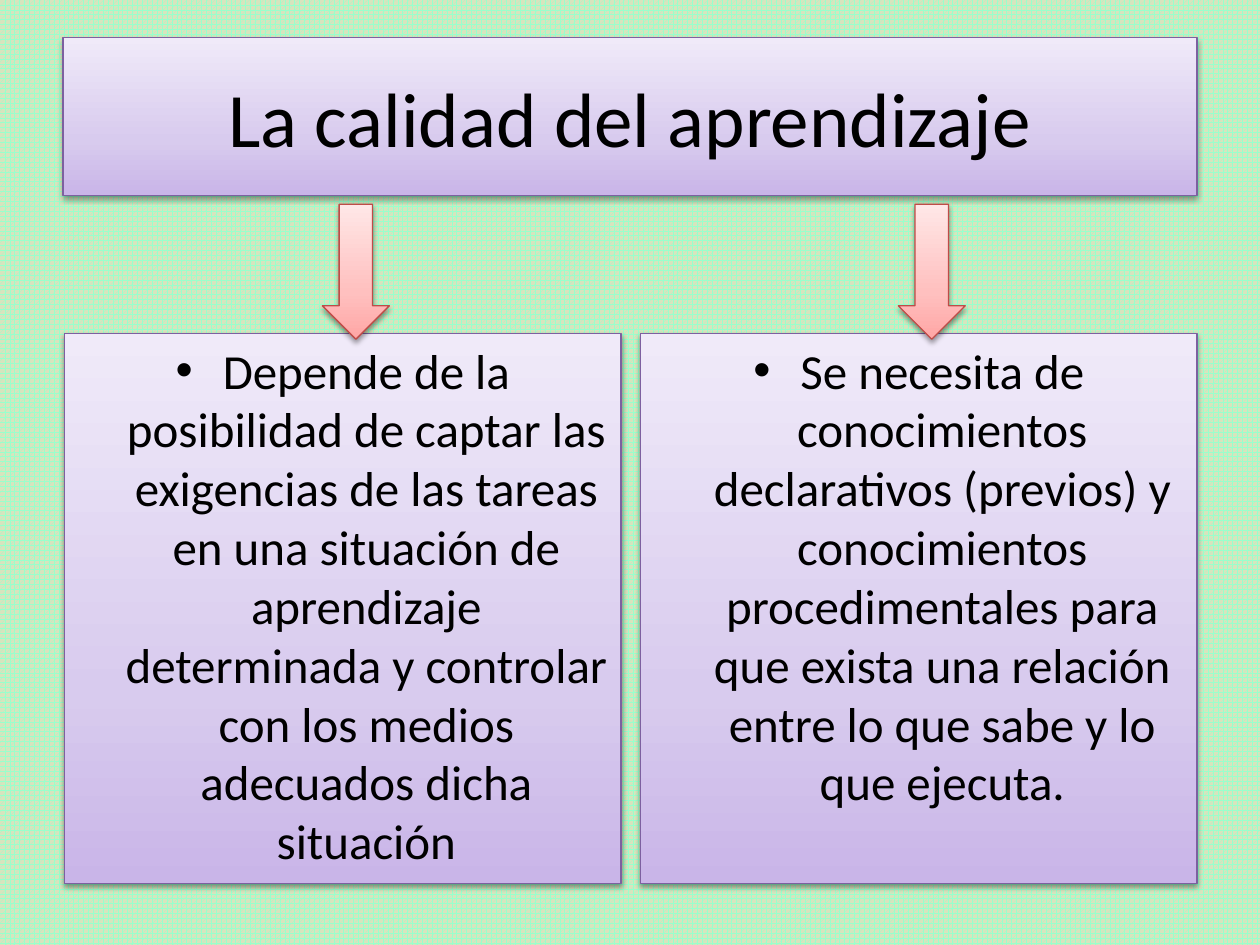
from dataclasses import dataclass

from lxml import etree
from pptx import Presentation
from pptx import util as u
from pptx.dml.color import RGBColor
from pptx.enum import dml, shapes, text
from pptx.oxml.ns import qn


@dataclass(frozen=True)
class Finish:
    stops: tuple[tuple[int, str], ...]
    line: str


@dataclass(frozen=True)
class Theme:
    font: str = "Calibri"
    ink: str = "000000"
    title_size: int = 44
    body_size: int = 28
    pattern_front: str = "99FFCC"
    pattern_back: str = "D7E4BD"
    purple: Finish = Finish(((0, "C9B5E8"), (35, "D8CBEE"), (100, "F0EAF9")), "7D60A0")
    red: Finish = Finish(((0, "FFA6A5"), (35, "FFC0BF"), (100, "FFE7E7")), "BF4C48")


@dataclass(frozen=True)
class Frame:
    """Position and size in centimetres."""
    left: float
    top: float
    width: float
    height: float

    def shifted(self, distance: float) -> "Frame":
        return Frame(self.left + distance, self.top, self.width, self.height)


THEME = Theme()
TITLE = Frame(1.27, 0.76, 22.86, 3.18)
FIRST_PANEL = Frame(1.3, 6.73, 11.22, 11.08)
FIRST_ARROW = Frame(6.5, 4.12, 1.35, 2.72)
COLUMN_PITCH = 11.61
INDENT = u.Cm(0.95)
STATEMENTS = (
    "Depende de la posibilidad de captar las exigencias de las tareas en una "
    "situación de aprendizaje determinada y controlar con los medios "
    "adecuados dicha situación",
    "Se necesita de conocimientos declarativos (previos) y conocimientos "
    "procedimentales para que exista una relación entre lo que sabe y lo que ejecuta.",
)


def add_color(parent, value: str):
    return etree.SubElement(parent, qn("a:srgbClr"), val=value)


def add_shadow(box) -> None:
    box.shadow.inherit = False
    effects = box._element.spPr.find(qn("a:effectLst"))
    shadow = etree.SubElement(
        effects, qn("a:outerShdw"), blurRad=str(u.Pt(3.1)),
        dist=str(u.Pt(1.6)), dir="5400000", rotWithShape="0")
    etree.SubElement(add_color(shadow, "000000"), qn("a:alpha"), val="38000")


def add_box(page, kind, frame: Frame, finish: Finish):
    """Add a shape with an upward gradient, a thin line and a soft shadow."""
    box = page.shapes.add_shape(
        kind, u.Cm(frame.left), u.Cm(frame.top), u.Cm(frame.width), u.Cm(frame.height))
    box.fill.gradient()
    box.fill.gradient_angle = 90
    stop_list = box._element.spPr.find(qn("a:gradFill")).find(qn("a:gsLst"))
    for old_stop in list(stop_list):
        stop_list.remove(old_stop)
    for position, color in finish.stops:
        add_color(etree.SubElement(stop_list, qn("a:gs"), pos=str(position * 1000)), color)
    box.line.color.rgb = RGBColor.from_string(finish.line)
    box.line.width = u.Pt(0.75)
    add_shadow(box)
    return box


def write(box, wording: str, size: int, anchor):
    box.text_frame.word_wrap = True
    box.text_frame.vertical_anchor = anchor
    para = box.text_frame.paragraphs[0]
    para.alignment = text.PP_ALIGN.CENTER
    span = para.add_run()
    span.text = wording
    span.font.name = THEME.font
    span.font.size = u.Pt(size)
    span.font.color.rgb = RGBColor.from_string(THEME.ink)
    return para


def add_bullet(para) -> None:
    para.space_before = u.Pt(THEME.body_size * 0.2)
    properties = para._p.get_or_add_pPr()
    properties.set("marL", str(INDENT))
    properties.set("indent", str(-INDENT))
    etree.SubElement(properties, qn("a:buFont"), typeface="Arial")
    etree.SubElement(properties, qn("a:buChar"), char="•")


def paint_background(page) -> None:
    fill = page.background.fill
    fill.patterned()
    fill.pattern = dml.MSO_PATTERN.SPHERE
    fill.fore_color.rgb = RGBColor.from_string(THEME.pattern_front)
    fill.back_color.rgb = RGBColor.from_string(THEME.pattern_back)


def main() -> None:
    deck = Presentation()
    deck.slide_width, deck.slide_height = u.Cm(25.4), u.Cm(19.05)
    page = deck.slides.add_slide(deck.slide_layouts[6])
    paint_background(page)

    rectangle = shapes.MSO_SHAPE.RECTANGLE
    title = add_box(page, rectangle, TITLE, THEME.purple)
    write(title, "La calidad del aprendizaje", THEME.title_size, text.MSO_ANCHOR.MIDDLE)
    for column, statement in enumerate(STATEMENTS):
        offset = column * COLUMN_PITCH
        panel = add_box(page, rectangle, FIRST_PANEL.shifted(offset), THEME.purple)
        add_bullet(write(panel, statement, THEME.body_size, text.MSO_ANCHOR.TOP))
        add_box(page, shapes.MSO_SHAPE.DOWN_ARROW, FIRST_ARROW.shifted(offset), THEME.red)

    deck.save("out.pptx")


if __name__ == "__main__":
    main()
